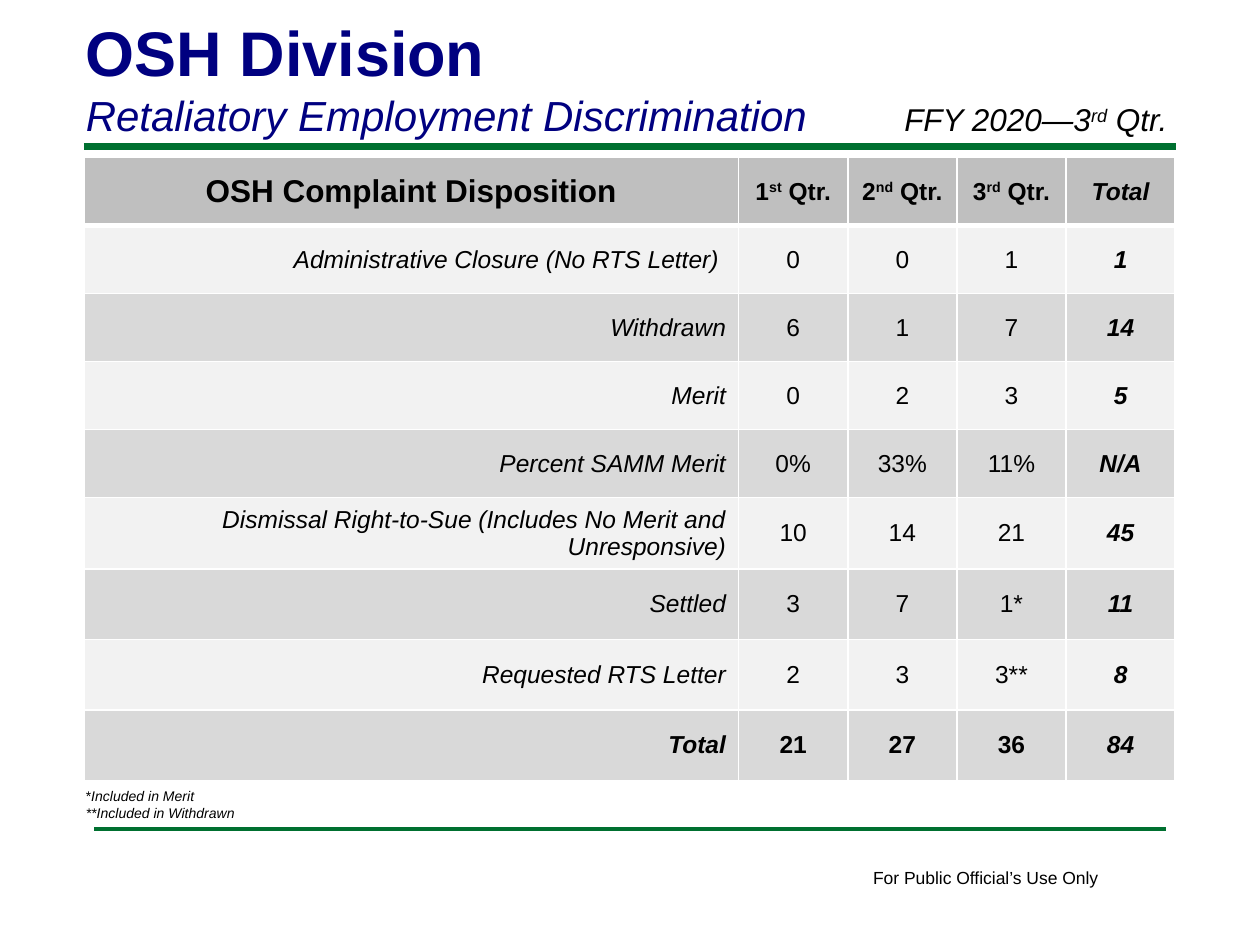
from dataclasses import dataclass

from lxml import etree
from pptx import Presentation
from pptx.dml.color import RGBColor
from pptx.enum.shapes import MSO_CONNECTOR
from pptx.enum.text import MSO_ANCHOR, MSO_AUTO_SIZE, PP_ALIGN
from pptx.oxml.ns import qn
from pptx.util import Cm, Pt

STRAIGHT = MSO_CONNECTOR.STRAIGHT
MIDDLE = MSO_ANCHOR.MIDDLE
FIT_TEXT = MSO_AUTO_SIZE.SHAPE_TO_FIT_TEXT
LEFT, CENTER, RIGHT = PP_ALIGN.LEFT, PP_ALIGN.CENTER, PP_ALIGN.RIGHT


@dataclass(frozen=True)
class Theme:
    font: str = "Arial"
    text: str = "000000"
    title: str = "000080"
    rule: str = "007030"
    border: str = "FFFFFF"
    header_fill: str = "BFBFBF"
    band_fills: tuple = ("F2F2F2", "D9D9D9")
    title_size: int = 36
    subtitle_size: int = 24
    heading_size: int = 18
    cell_size: int = 14
    footer_size: int = 10
    note_size: int = 8


@dataclass(frozen=True)
class Piece:
    """A stretch of text with one look."""
    text: str
    size: float
    bold: bool = False
    italic: bool = False
    raised: bool = False
    color: str = Theme.text


def ordinal(before, suffix, after, size, **look):
    """Pieces for a text with a raised ordinal ending."""
    return [Piece(before, size, **look), Piece(suffix, size, raised=True, **look),
            Piece(after, size, **look)]


class SlideBuilder:
    def __init__(self, slide, theme):
        self.slide = slide
        self.theme = theme

    def add_pieces(self, paragraph, pieces, alignment=LEFT):
        paragraph.alignment = alignment
        for piece in pieces:
            run = paragraph.add_run()
            run.text = piece.text
            run.font.name = self.theme.font
            run.font.size = Pt(piece.size)
            run.font.bold = piece.bold
            run.font.italic = piece.italic
            run.font.color.rgb = RGBColor.from_string(piece.color)
            if piece.raised:
                run.font._element.set("baseline", "30000")

    def text_box(self, left, top, width, height, lines, wrap=True):
        shape = self.slide.shapes.add_textbox(Cm(left), Cm(top), Cm(width), Cm(height))
        frame = shape.text_frame
        frame.word_wrap = wrap
        frame.auto_size = FIT_TEXT
        for index, pieces in enumerate(lines):
            paragraph = frame.add_paragraph() if index else frame.paragraphs[0]
            self.add_pieces(paragraph, pieces)

    def rule(self, left, right, top, weight):
        line = self.slide.shapes.add_connector(STRAIGHT, Cm(left), Cm(top), Cm(right), Cm(top))
        line.line.color.rgb = RGBColor.from_string(self.theme.rule)
        line.line.width = Pt(weight)
        etree.SubElement(line._element.spPr, qn("a:effectLst"))

    def cell_borders(self, cell, bottom, top):
        properties = cell._tc.get_or_add_tcPr()
        weights = {"a:lnL": 1, "a:lnR": 1, "a:lnT": top, "a:lnB": bottom}
        for index, (tag, weight) in enumerate(weights.items()):
            border = etree.Element(qn(tag), w=str(int(Pt(weight))))
            fill = etree.SubElement(border, qn("a:solidFill"))
            etree.SubElement(fill, qn("a:srgbClr"), val=self.theme.border)
            properties.insert(index, border)

    def table(self, left, top, widths, heights, rows):
        table = self.slide.shapes.add_table(
            len(rows), len(widths), Cm(left), Cm(top),
            Cm(sum(widths)), Cm(sum(heights))).table
        for column, width in zip(table.columns, widths):
            column.width = Cm(width)
        for index, (row, height) in enumerate(zip(table.rows, heights)):
            row.height = Cm(height)
            color = self.theme.band_fills[(index - 1) % 2] if index else self.theme.header_fill
            for column, (cell, pieces) in enumerate(zip(row.cells, rows[index])):
                cell.fill.solid()
                cell.fill.fore_color.rgb = RGBColor.from_string(color)
                cell.vertical_anchor = MIDDLE
                self.cell_borders(cell, bottom=1 if index else 3, top=3 if index == 1 else 1)
                alignment = RIGHT if index and not column else CENTER
                self.add_pieces(cell.text_frame.paragraphs[0], pieces, alignment)


DISPOSITIONS = [
    ("Administrative Closure (No RTS Letter) ", "0", "0", "1", "1"),
    ("Withdrawn", "6", "1", "7", "14"),
    ("Merit", "0", "2", "3", "5"),
    ("Percent SAMM Merit", "0%", "33%", "11%", "N/A"),
    ("Dismissal Right-to-Sue (Includes No Merit and Unresponsive)", "10", "14", "21", "45"),
    ("Settled", "3", "7", "1*", "11"),
    ("Requested RTS Letter", "2", "3", "3**", "8"),
    ("Total", "21", "27", "36", "84"),
]


def disposition_rows(theme):
    size = theme.cell_size
    quarters = [ordinal(number, suffix, " Qtr.", size, bold=True)
                for number, suffix in (("1", "st"), ("2", "nd"), ("3", "rd"))]
    rows = [[[Piece("OSH Complaint Disposition", theme.heading_size, bold=True)],
             *quarters, [Piece("Total", size, bold=True, italic=True)]]]
    for values in DISPOSITIONS:
        last = len(values) - 1
        rows.append([[Piece(value, size,
                            bold=values[0] == "Total" or column == last,
                            italic=column in (0, last))]
                     for column, value in enumerate(values)])
    return rows


def main():
    theme = Theme()
    presentation = Presentation()
    presentation.slide_width, presentation.slide_height = Cm(25.4), Cm(19.05)
    slide = presentation.slides.add_slide(presentation.slide_layouts[6])
    builder = SlideBuilder(slide, theme)

    # Rules and footer
    builder.rule(1.69, 23.71, 2.96, 4)
    builder.rule(1.9, 23.5, 16.71, 2)
    builder.text_box(17.35, 17.35, 5.1, 0.69,
                     [[Piece("For Public Official’s Use Only", theme.footer_size)]], wrap=False)

    # Complaint table
    builder.table(1.69, 3.18, [13.2] + [2.2] * 4, [1.37] * 5 + [1.42] * 4,
                  disposition_rows(theme))

    # Title and period
    builder.text_box(1.48, 0.15, 20.95, 2.82, [
        [Piece("OSH Division", theme.title_size, bold=True, color=theme.title)],
        [Piece("Retaliatory Employment Discrimination", theme.subtitle_size,
               italic=True, color=theme.title)]])
    builder.text_box(17.98, 1.9, 6.35, 1.02,
                     [ordinal("FFY 2020—3", "rd", " Qtr.", theme.heading_size, italic=True)])

    # Footnotes
    builder.text_box(1.48, 15.75, 3.55, 0.94, [
        [Piece("*", theme.note_size), Piece("Included in Merit", theme.note_size, italic=True)],
        [Piece("**Included in Withdrawn", theme.note_size, italic=True)]], wrap=False)

    presentation.save("out.pptx")


if __name__ == "__main__":
    main()
